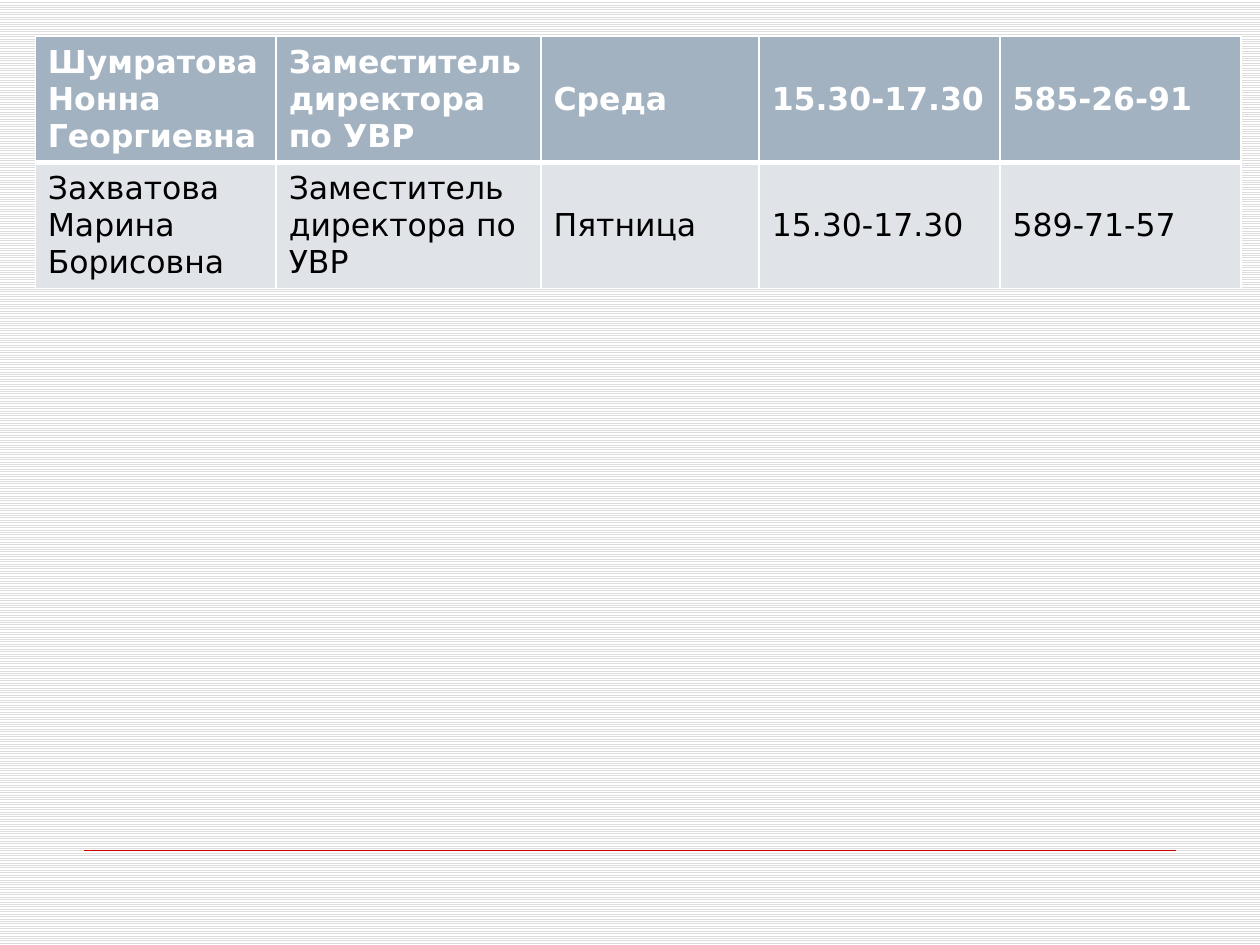
from lxml.etree import SubElement
from pptx import Presentation
from pptx.dml.color import RGBColor
from pptx.enum.dml import MSO_PATTERN
from pptx.enum.shapes import MSO_CONNECTOR
from pptx.enum.text import MSO_ANCHOR
from pptx.oxml.ns import qn
from pptx.util import Inches, Pt

FONT = "DejaVu Sans"
COLUMN_WIDTHS = [1.91, 2.1, 1.73, 1.91, 1.91]
SCHEDULE = [
    ["Шумратова Нонна Георгиевна", "Заместитель директора по УВР",
     "Среда", "15.30-17.30", "585-26-91"],
    ["Захватова Марина Борисовна", "Заместитель директора по УВР",
     "Пятница", "15.30-17.30", "589-71-57"],
]
HEADER = {"fill": "A3B2C1", "text": "FFFFFF", "bold": True,
          "borders": {"lnL": 1, "lnR": 1, "lnT": 1, "lnB": 3}}
BODY = {"fill": "E0E4E9", "text": "000000", "bold": False,
        "borders": {"lnL": 1, "lnR": 1, "lnT": 3, "lnB": 1}}


def color(hex_value):
    return RGBColor.from_string(hex_value)


def set_borders(cell, widths, hex_value):
    """Draw cell edges; call before the fill is set, as the schema orders them so."""
    properties = cell._tc.get_or_add_tcPr()
    for edge, width in widths.items():
        line = SubElement(properties, qn(f"a:{edge}"), w=str(Pt(width)))
        fill = SubElement(line, qn("a:solidFill"))
        SubElement(fill, qn("a:srgbClr"), val=hex_value)


def format_cell(cell, text, style):
    set_borders(cell, style["borders"], "FFFFFF")
    cell.fill.solid()
    cell.fill.fore_color.rgb = color(style["fill"])
    cell.vertical_anchor = MSO_ANCHOR.MIDDLE
    cell.text = text
    font = cell.text_frame.paragraphs[0].runs[0].font
    for name, value in {"name": FONT, "size": Pt(18), "bold": style["bold"]}.items():
        setattr(font, name, value)
    font.color.rgb = color(style["text"])


def add_schedule(slide, left, top, width, height):
    table = slide.shapes.add_table(len(SCHEDULE), len(COLUMN_WIDTHS),
                                   left, top, width, height).table
    for column, share in zip(table.columns, COLUMN_WIDTHS):
        column.width = int(width * share / sum(COLUMN_WIDTHS))
    for row, texts, style in zip(table.rows, SCHEDULE, [HEADER, BODY]):
        for cell, text in zip(row.cells, texts):
            format_cell(cell, text, style)


def add_footer_rule(slide, left, top, width):
    rule = slide.shapes.add_connector(MSO_CONNECTOR.STRAIGHT,
                                      left, top, left + width, top)
    rule.line.color.rgb = color("CC0000")
    rule.line.width = Pt(0.25)
    SubElement(rule._element.spPr, qn("a:effectLst"))


def set_background(slide):
    fill = slide.background.fill
    fill.patterned()
    fill.pattern = MSO_PATTERN.LIGHT_HORIZONTAL
    fill.fore_color.rgb = color("DDDDDD")
    fill.back_color.rgb = color("FFFFFF")


def main():
    presentation = Presentation()
    presentation.slide_width = Inches(10)
    presentation.slide_height = Inches(7.5)
    slide = presentation.slides.add_slide(presentation.slide_layouts[6])
    set_background(slide)
    add_footer_rule(slide, Inches(0.67), Inches(6.75), Inches(8.66))
    add_schedule(slide, Inches(0.28), Inches(0.29), Inches(9.57), Inches(2))
    presentation.save("out.pptx")


if __name__ == "__main__":
    main()
